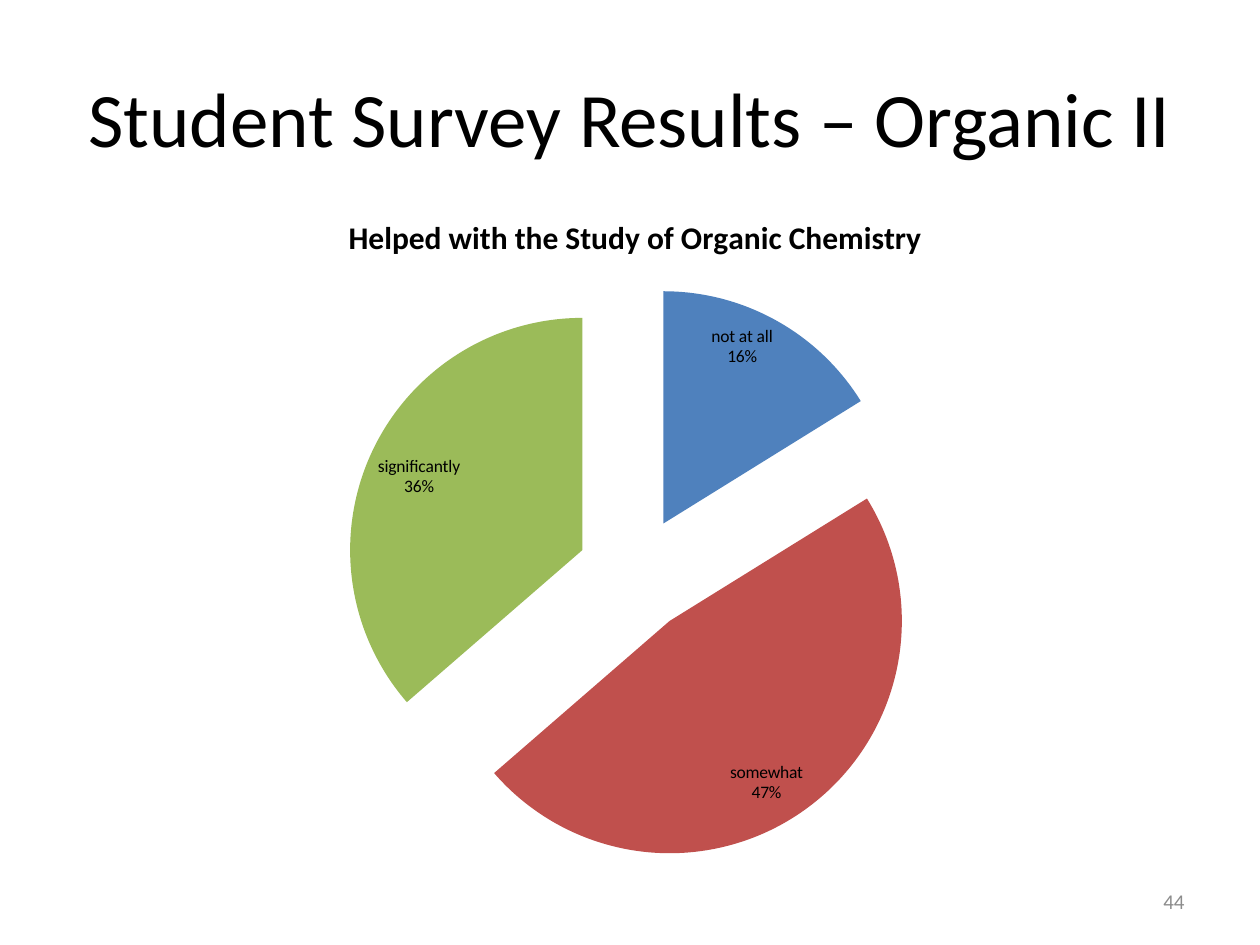
from lxml.etree import Element
from pptx import Presentation
from pptx.chart.data import CategoryChartData
from pptx.dml.color import RGBColor
from pptx.enum.chart import XL_CHART_TYPE as ChartType, XL_LABEL_POSITION as LabelPosition
from pptx.enum.text import MSO_ANCHOR as Anchor, PP_ALIGN as Align
from pptx.oxml.ns import qn
from pptx.util import Pt

RESPONSES = [
    ("not at all", 16, "4F81BD"),
    ("somewhat", 47, "C0504D"),
    ("significantly", 36, "9BBB59"),
]


def set_font(font, size, color, bold=False):
    """Apply the slide's typeface with a size, colour and weight."""
    font.name = "Calibri"
    font.size = Pt(size)
    font.bold = bold
    font.color.rgb = RGBColor.from_string(color)


def add_text(slide, text, left, top, width, height, size, color, align):
    """Add a vertically centred line of text."""
    box = slide.shapes.add_textbox(Pt(left), Pt(top), Pt(width), Pt(height))
    frame = box.text_frame
    frame.word_wrap = True
    frame.vertical_anchor = Anchor.MIDDLE
    paragraph = frame.paragraphs[0]
    paragraph.text = text
    paragraph.alignment = align
    set_font(paragraph.font, size, color)


def label_slices(series):
    """Show each category above its percentage, inside the slice."""
    labels = series.data_labels
    labels.show_value = False
    labels.show_category_name = True
    labels.show_percentage = True
    labels.position = LabelPosition.INSIDE_END
    set_font(labels.font, 10, "000000")
    separator = Element(qn("c:separator"))
    separator.text = "\n"
    labels._element.find(qn("c:showBubbleSize")).addnext(separator)


def add_pie(slide, title, responses, left, top, width, height):
    """Add an exploded pie chart of the survey responses."""
    data = CategoryChartData()
    data.categories = [name for name, _, _ in responses]
    data.add_series("Series 1", [value for _, value, _ in responses])
    chart = slide.shapes.add_chart(
        ChartType.PIE_EXPLODED, Pt(left), Pt(top), Pt(width), Pt(height), data
    ).chart
    set_font(chart.font, 10, "000000")
    chart.has_legend = False
    chart.has_title = True
    heading = chart.chart_title.text_frame.paragraphs[0]
    heading.text = title
    set_font(heading.font, 18, "000000", bold=True)
    plot = chart.plots[0]
    plot.vary_by_categories = True
    series = plot.series[0]
    for index, (_, _, color) in enumerate(responses):
        fill = series.points[index].format.fill
        fill.solid()
        fill.fore_color.rgb = RGBColor.from_string(color)
    label_slices(series)


def main():
    """Build and save the survey slide."""
    presentation = Presentation()
    presentation.slide_width, presentation.slide_height = Pt(720), Pt(540)
    slide = presentation.slides.add_slide(presentation.slide_layouts[6])
    add_text(slide, "Student Survey Results – Organic II",
             36, 21.6, 648, 90, 44, "000000", Align.CENTER)
    add_pie(slide, "Helped with the Study of Organic Chemistry", RESPONSES,
            42, 108, 642, 396)
    add_text(slide, "44", 516, 500.5, 168, 28.8, 12, "8C8C8C", Align.RIGHT)
    presentation.save("out.pptx")


if __name__ == "__main__":
    main()
